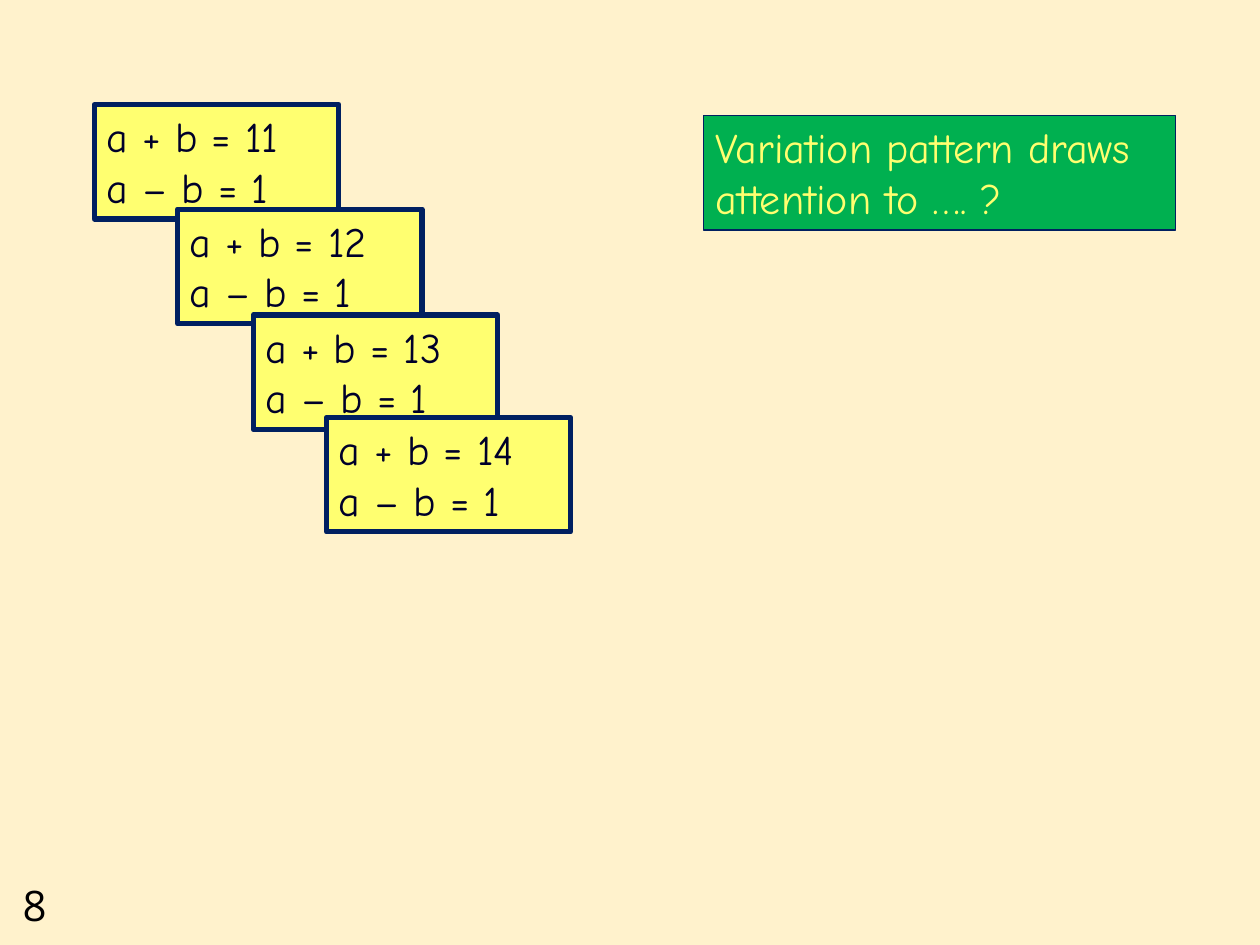
from pptx import Presentation
from pptx.dml.color import RGBColor
from pptx.enum.shapes import MSO_SHAPE
from pptx.enum.text import MSO_ANCHOR, PP_ALIGN
from pptx.util import Pt

CREAM = RGBColor(0xFF, 0xF2, 0xCC)
YELLOW = RGBColor(0xFF, 0xFF, 0x70)
GREEN = RGBColor(0x00, 0xB0, 0x50)
NAVY = RGBColor(0x00, 0x20, 0x60)
INK = RGBColor(0x00, 0x00, 0x2A)
BLACK = RGBColor(0x00, 0x00, 0x00)


def add_lines(sp, lines, font, color):
    tf = sp.text_frame
    tf.word_wrap = True
    tf.vertical_anchor = MSO_ANCHOR.TOP
    for i, line in enumerate(lines):
        p = tf.add_paragraph() if i else tf.paragraphs[0]
        p.alignment = PP_ALIGN.LEFT
        r = p.add_run()
        r.text = line
        r.font.name = font
        r.font.size = Pt(24)
        r.font.color.rgb = color


def add_card(x, y, w, fill, line_width, lines, color):
    sp = s.shapes.add_shape(MSO_SHAPE.RECTANGLE, Pt(x), Pt(y), Pt(w), Pt(65.4))
    sp.shadow.inherit = False
    sp.fill.solid()
    sp.fill.fore_color.rgb = fill
    sp.line.color.rgb = NAVY
    sp.line.width = Pt(line_width)
    add_lines(sp, lines, "Comic Neue", color)


prs = Presentation()
prs.slide_width, prs.slide_height = Pt(720), Pt(540)
s = prs.slides.add_slide(prs.slide_layouts[6])
s.background.fill.solid()
s.background.fill.fore_color.rgb = CREAM

# Slide number
number = s.shapes.add_textbox(Pt(5.8), Pt(499), Pt(54), Pt(36))
add_lines(number, ["8"], "Open Sans", BLACK)

# Cascade of equation pairs: only the sum changes
corners = [(54, 59.8), (101.5, 119.5), (144.7, 180), (186.5, 238.5)]
for total, (x, y) in enumerate(corners, start=11):
    add_card(x, y, 139.7, YELLOW, 3, [f"a + b = {total}", "a – b = 1"], INK)

# Question about the pattern
add_card(401.8, 66, 270, GREEN, 0.75,
         ["Variation pattern draws attention to …. ?"], YELLOW)

prs.save("out.pptx")
